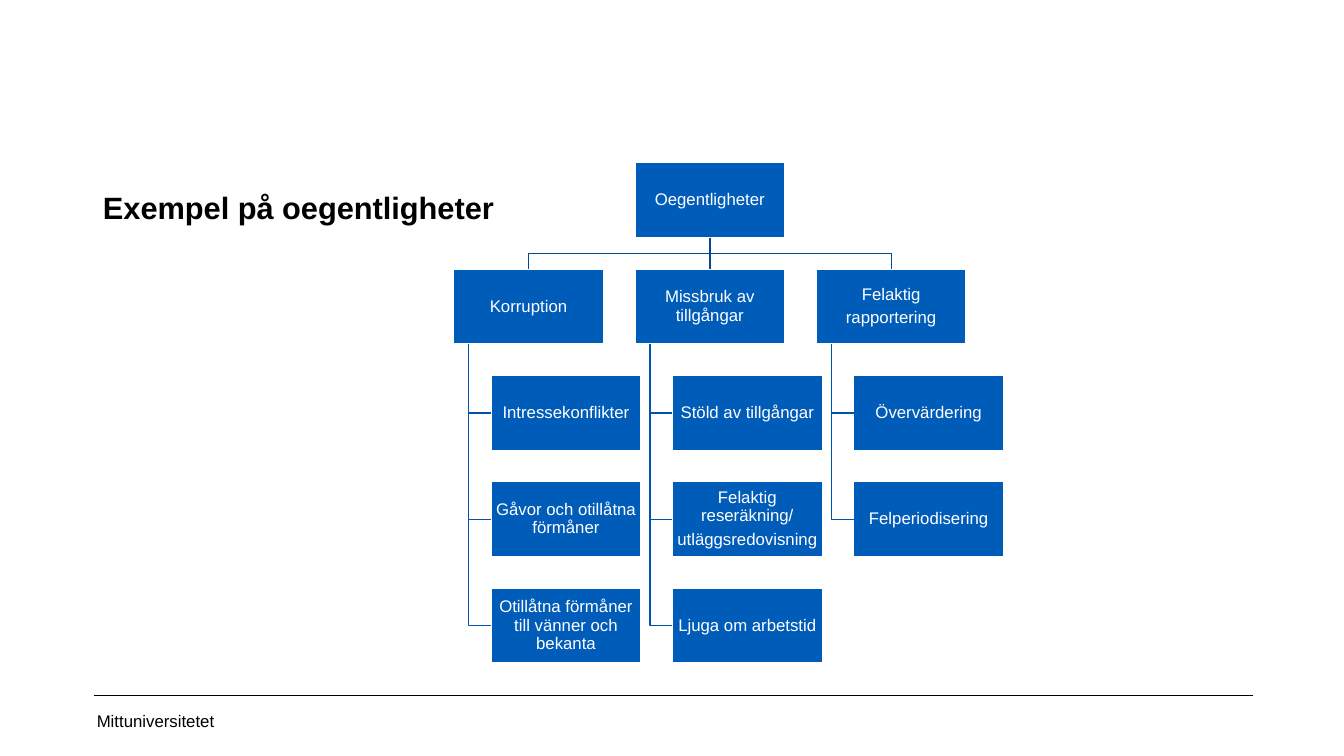
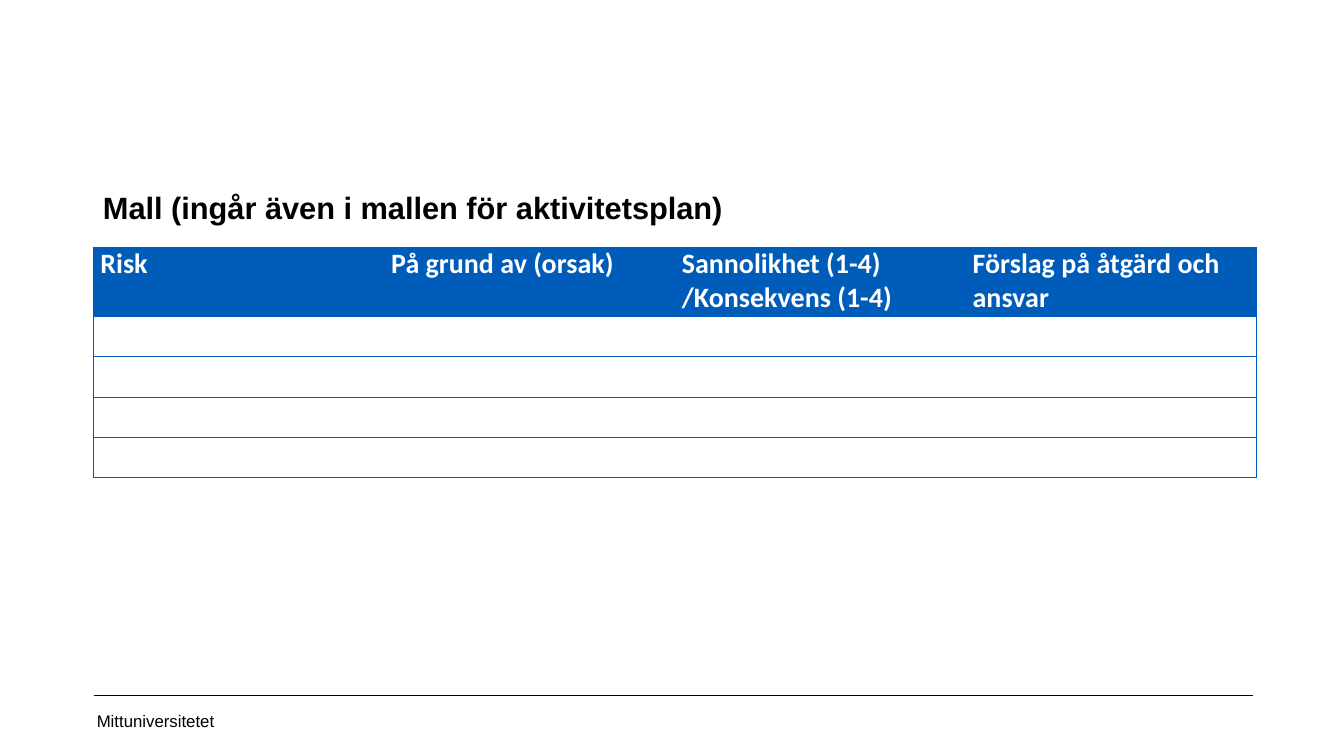
from dataclasses import dataclass

from lxml.etree import SubElement
from pptx import Presentation
from pptx.dml.color import RGBColor
from pptx.enum.shapes import MSO_CONNECTOR as Connector, MSO_SHAPE as Preset
from pptx.enum.text import MSO_ANCHOR as Anchor, MSO_AUTO_SIZE as AutoSize, PP_ALIGN as Align
from pptx.oxml.ns import qn
from pptx.util import Cm, Pt


@dataclass(frozen=True)
class Theme:
    """Colours, fonts and type sizes of the deck."""
    blue: str = "005CB9"
    trunk: str = "004A94"
    branch: str = "0053A8"
    black: str = "000000"
    white: str = "FFFFFF"
    font: str = "Arial"
    table_font: str = "Calibri"
    title_size: int = 22
    header_size: int = 20
    small_size: int = 12


THEME = Theme()
NO_GRID_STYLE = "{2D5ABB26-0587-4C30-8999-92F81FD0307C}"
MARGIN, CONTENT_WIDTH = Cm(2.34), Cm(29.31)

BOX_WIDTH, BOX_HEIGHT, BOX_GAP = Cm(3.78), Cm(1.89), Cm(0.79)
CHART_LEFT, CHART_TOP = Cm(11.43), Cm(4.1)
CHILD_INDENT, SPINE_INDENT = BOX_WIDTH // 4, BOX_WIDTH // 10

ROOT = "Oegentligheter"
CATEGORIES = {
    "Korruption": ["Intressekonflikter", "Gåvor och otillåtna förmåner",
                   "Otillåtna förmåner till vänner och bekanta"],
    "Missbruk av tillgångar": ["Stöld av tillgångar",
                               "Felaktig reseräkning/\nutläggsredovisning",
                               "Ljuga om arbetstid"],
    "Felaktig\nrapportering": ["Övervärdering", "Felperiodisering"],
}
RISK_HEADINGS = ["Risk", "På grund av (orsak)", "Sannolikhet (1-4) /Konsekvens (1-4)",
                 "Förslag på åtgärd och ansvar"]
EMPTY_RISK_ROWS = 4


def rgb(colour):
    """Return the colour object for a hex string."""
    return RGBColor.from_string(colour)


def write_text(frame, text, size=THEME.small_size, colour=THEME.black, font=THEME.font,
               bold=False, align=Align.LEFT, spacing=None, after=0):
    """Fill a text frame with one formatted paragraph per line of text."""
    frame.word_wrap = True
    for index, line in enumerate(text.split("\n")):
        paragraph = frame.add_paragraph() if index else frame.paragraphs[0]
        paragraph.alignment = align
        paragraph.line_spacing = spacing
        paragraph.space_after = Pt(after)
        run = paragraph.add_run()
        run.text = line
        run.font.name, run.font.size, run.font.bold = font, Pt(size), bold
        run.font.color.rgb = rgb(colour)


def set_margins(holder, left=0, top=0, right=0, bottom=0):
    """Set the inner margins of a text frame or table cell."""
    holder.margin_left, holder.margin_top = left, top
    holder.margin_right, holder.margin_bottom = right, bottom


def add_line(slide, start, end, colour, width):
    """Draw a straight connector without shadow."""
    line = slide.shapes.add_connector(Connector.STRAIGHT, *start, *end)
    line.line.color.rgb = rgb(colour)
    line.line.width = Pt(width)
    SubElement(line.element.spPr, qn("a:effectLst"))
    return line


def add_bent_line(slide, points, colour):
    """Draw an open line through the points."""
    builder = slide.shapes.build_freeform(*points[0])
    builder.add_line_segments(points[1:], close=False)
    bent = builder.convert_to_shape()
    bent.shadow.inherit = False
    bent.fill.background()
    bent.line.color.rgb = rgb(colour)
    bent.line.width = Pt(1)


def add_box(slide, text, column, row, indent=0):
    """Add a chart box at a place in the grid."""
    left = CHART_LEFT + column * (BOX_WIDTH + BOX_GAP) + indent
    top = CHART_TOP + row * (BOX_HEIGHT + BOX_GAP)
    box = slide.shapes.add_shape(Preset.RECTANGLE, left, top, BOX_WIDTH, BOX_HEIGHT)
    box.shadow.inherit = False
    box.fill.solid()
    box.fill.fore_color.rgb = rgb(THEME.blue)
    box.line.color.rgb = rgb(THEME.white)
    box.line.width = Pt(1)
    box.text_frame.vertical_anchor = Anchor.MIDDLE
    set_margins(box.text_frame, Cm(0.03), Cm(0.03), Cm(0.03), Cm(0.03))
    write_text(box.text_frame, text, colour=THEME.white, align=Align.CENTER,
               spacing=0.9, after=4)
    return box


def link_root(slide, root, category):
    """Link the root box to the top of a category box."""
    start = (root.left + BOX_WIDTH // 2, root.top + BOX_HEIGHT)
    end = (category.left + BOX_WIDTH // 2, category.top)
    if start[0] == end[0]:
        link = add_line(slide, start, end, THEME.trunk, 1)
        link.begin_connect(root, 2)
        link.end_connect(category, 0)
    else:
        middle = (start[1] + end[1]) // 2
        add_bent_line(slide, [start, (start[0], middle), (end[0], middle), end], THEME.trunk)


def link_child(slide, category, child):
    """Link a category's spine to the left side of a child box."""
    spine = category.left + SPINE_INDENT
    middle = child.top + BOX_HEIGHT // 2
    add_bent_line(slide, [(spine, category.top + BOX_HEIGHT), (spine, middle),
                          (child.left, middle)], THEME.branch)


def add_hierarchy(slide):
    """Draw the root, its categories and their examples."""
    root = add_box(slide, ROOT, 1, 0)
    for column, (name, examples) in enumerate(CATEGORIES.items()):
        category = add_box(slide, name, column, 1)
        link_root(slide, root, category)
        for row, example in enumerate(examples, start=2):
            link_child(slide, category, add_box(slide, example, column, row, CHILD_INDENT))


def set_borders(cell, sides):
    """Give the named sides of a cell a thin blue border."""
    properties = cell._tc.get_or_add_tcPr()
    for position, side in enumerate(sides):
        border = SubElement(properties, qn(f"a:ln{side}"), w=str(Pt(0.5)))
        fill = SubElement(border, qn("a:solidFill"))
        SubElement(fill, qn("a:srgbClr"), val=THEME.blue)
        properties.insert(position, border)


def add_risk_table(slide):
    """Add the risk template with its headings and empty rows."""
    header_height, row_height = Cm(1.74), Cm(1.02)
    frame = slide.shapes.add_table(EMPTY_RISK_ROWS + 1, len(RISK_HEADINGS), MARGIN, Cm(6.22),
                                   CONTENT_WIDTH, header_height + EMPTY_RISK_ROWS * row_height)
    frame.element.find(f".//{qn('a:tableStyleId')}").text = NO_GRID_STYLE
    table = frame.table
    last_column = len(RISK_HEADINGS) - 1
    for index, row in enumerate(table.rows):
        row.height = row_height if index else header_height
        for column, cell in enumerate(row.cells):
            set_margins(cell, left=Cm(0.19), right=Cm(0.19))
            if index:
                cell.fill.background()
            else:
                cell.fill.solid()
                cell.fill.fore_color.rgb = rgb(THEME.blue)
                write_text(cell.text_frame, RISK_HEADINGS[column], size=THEME.header_size,
                           colour=THEME.white, font=THEME.table_font, bold=True, after=6)
            outer = ["L"] * (column == 0) + ["R"] * (column == last_column)
            set_borders(cell, outer + ["T", "B"])


def add_titled_slide(deck, layout, title):
    """Add a slide with its title."""
    slide = deck.slides.add_slide(layout)
    write_text(slide.shapes.title.text_frame, title, size=THEME.title_size, bold=True,
               spacing=Pt(36))
    return slide


def place_title(layout):
    """Keep only the layout's title and set its place."""
    for placeholder in list(layout.placeholders):
        if placeholder.placeholder_format.idx:
            placeholder.element.getparent().remove(placeholder.element)
            continue
        placeholder.left, placeholder.top = MARGIN, Cm(4.29)
        placeholder.width, placeholder.height = CONTENT_WIDTH, Cm(1.8)
        placeholder.text_frame.vertical_anchor = Anchor.TOP
        placeholder.text_frame.auto_size = AutoSize.NONE


def add_shared_footer(layout, slide):
    """Build the footer on a slide and move it to the layout."""
    footer = slide.shapes.add_textbox(MARGIN, Cm(17.65), Cm(7.62), Cm(1.02))
    footer.text_frame.vertical_anchor = Anchor.MIDDLE
    set_margins(footer.text_frame, Cm(0.1), Cm(0.13), Cm(0.25), Cm(0.13))
    write_text(footer.text_frame, "Mittuniversitetet")
    rule = add_line(slide, (Cm(2.36), Cm(17.52)), (Cm(31.57), Cm(17.52)), THEME.black, 0.25)
    for part in (footer, rule):
        layout.shapes.element.append(part.element)


def main():
    """Build and save the deck."""
    deck = Presentation()
    deck.slide_width, deck.slide_height = Cm(33.87), Cm(19.05)
    layout = deck.slide_layouts[5]
    place_title(layout)
    examples = add_titled_slide(deck, layout, "Exempel på oegentligheter")
    add_shared_footer(layout, examples)
    add_hierarchy(examples)
    template = add_titled_slide(deck, layout, "Mall (ingår även i mallen för aktivitetsplan)")
    add_risk_table(template)
    deck.save("out.pptx")


if __name__ == "__main__":
    main()
